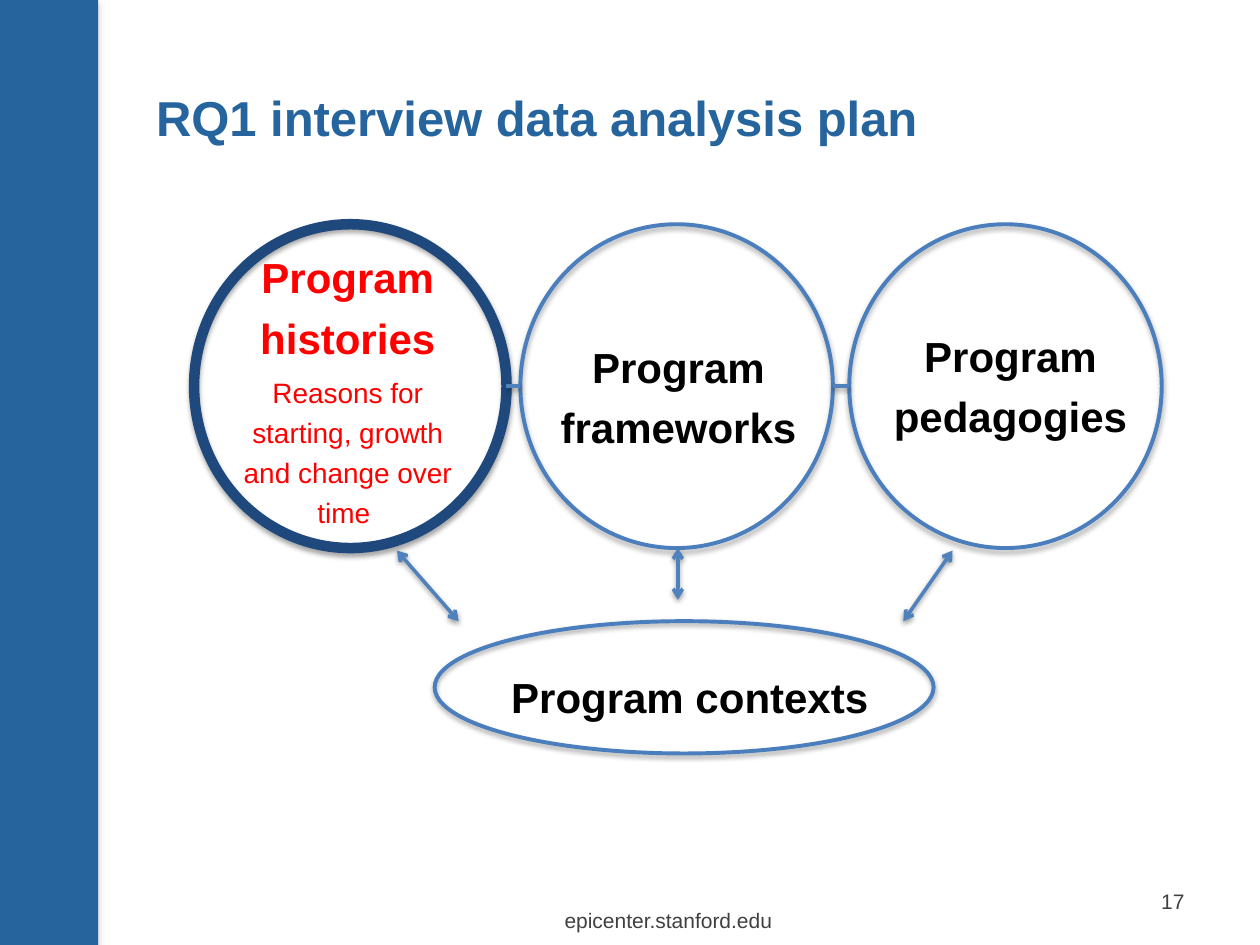
from dataclasses import dataclass

from lxml import etree
from pptx import Presentation
from pptx.dml.color import RGBColor
from pptx.enum.shapes import MSO_CONNECTOR, MSO_SHAPE
from pptx.enum.text import MSO_ANCHOR, PP_ALIGN
from pptx.oxml.ns import qn
from pptx.util import Inches, Pt

RECT, OVAL = MSO_SHAPE.RECTANGLE, MSO_SHAPE.OVAL
STRAIGHT = MSO_CONNECTOR.STRAIGHT
TOP, MIDDLE = MSO_ANCHOR.TOP, MSO_ANCHOR.MIDDLE
LEFT, CENTER, RIGHT = PP_ALIGN.LEFT, PP_ALIGN.CENTER, PP_ALIGN.RIGHT


@dataclass(frozen=True)
class Theme:
    font: str = "Arial"
    brand: str = "26649D"
    outline: str = "4B7EBC"
    focus: str = "1F497D"
    arrow: str = "4F81BD"
    red: str = "FF0000"
    black: str = "000000"
    gray: str = "404040"
    bar_shadow: str = "808080"
    title: int = 28
    label: int = 24
    detail: int = 16
    footer: int = 12


T = Theme()


def rgb(value):
    return RGBColor.from_string(value)


def add_shadow(sp, color, alpha=35, dist=1.8):
    """Give a shape or connector a soft shadow straight below it."""
    sp_pr = sp._element.spPr
    for old in sp_pr.findall(qn("a:effectLst")):
        sp_pr.remove(old)
    effects = etree.SubElement(sp_pr, qn("a:effectLst"))
    shadow = etree.SubElement(
        effects, qn("a:outerShdw"), blurRad=str(Pt(3.1)), dist=str(Pt(dist)),
        dir="5400000", rotWithShape="0")
    clr = etree.SubElement(shadow, qn("a:srgbClr"), val=color)
    etree.SubElement(clr, qn("a:alpha"), val=str(alpha * 1000))


def add_bar(s):
    sp = s.shapes.add_shape(RECT, 0, 0, Inches(0.78), Inches(7.5))
    sp.fill.solid()
    sp.fill.fore_color.rgb = rgb(T.brand)
    sp.line.fill.background()
    add_shadow(sp, T.bar_shadow)


def add_oval(s, box, color=T.outline, width=2.25):
    sp = s.shapes.add_shape(OVAL, *map(Inches, box))
    sp.fill.background()
    sp.line.color.rgb = rgb(color)
    sp.line.width = Pt(width)
    add_shadow(sp, T.black)


def add_text(s, box, lines, color, align=CENTER, anchor=MIDDLE, **spacing):
    """Write (text, size, bold) lines, one paragraph each."""
    tf = s.shapes.add_textbox(*map(Inches, box)).text_frame
    tf.word_wrap = True
    tf.vertical_anchor = anchor
    for i, (text, size, bold) in enumerate(lines):
        p = tf.add_paragraph() if i else tf.paragraphs[0]
        p.alignment = align
        for name, value in spacing.items():
            setattr(p, name, value)
        if i:
            p.space_before = Pt(size * 0.2)
        r = p.add_run()
        r.text = text
        fmt = {"name": T.font, "size": Pt(size), "bold": bold}
        for name, value in fmt.items():
            setattr(r.font, name, value)
        r.font.color.rgb = rgb(color)
    return tf


def add_label(s, box, lines, color=T.black):
    tf = add_text(s, box, lines, color, anchor=TOP, line_spacing=1.2)
    for p in tf.paragraphs:
        p_pr = p._p.get_or_add_pPr()
        p_pr.set("marL", str(Inches(0.09)))
        p_pr.set("indent", "0")


def add_link(s, start, end, arrows=False):
    cx = s.shapes.add_connector(STRAIGHT, *map(Inches, start + end))
    cx.line.color.rgb = rgb(T.arrow)
    cx.line.width = Pt(2)
    if arrows:
        ln = cx.line._get_or_add_ln()
        for tag in ("a:headEnd", "a:tailEnd"):
            etree.SubElement(ln, qn(tag), type="arrow")
    add_shadow(cx, T.black, alpha=38, dist=1.6)


def main():
    prs = Presentation()
    prs.slide_width, prs.slide_height = Inches(10), Inches(7.5)
    s = prs.slides.add_slide(prs.slide_layouts[6])

    # Frame: side bar, footer, page number and title
    add_bar(s)
    add_text(s, (3.72, 7.1, 3.17, 0.4),
             [("epicenter.stanford.edu", T.footer, False)], T.gray)
    add_text(s, (7.17, 6.95, 2.33, 0.4), [("17", T.footer, False)], T.gray, RIGHT)
    add_text(s, (1.14, 0.3, 8.36, 1.25),
             [("RQ1 interview data analysis plan", T.title, True)], T.brand, LEFT)

    # Three program circles, the first one in focus, above the contexts oval
    lefts, top, width, height = (1.54, 4.13, 6.74), 1.78, 2.48, 2.57
    for i, left in enumerate(lefts):
        style = {} if i else {"color": T.focus, "width": 6}
        add_oval(s, (left, top, width, height), **style)
    add_oval(s, (3.45, 4.93, 3.96, 1.05))

    # Labels
    add_label(s, (1.66, 1.87, 2.11, 0.98), [
        ("Program histories", T.label, True),
        ("Reasons for starting, growth and change over time ", T.detail, False),
    ], T.red)
    for text, box in (
        ("Program frameworks", (3.72, 2.58, 3.24, 0.97)),
        ("Program pedagogies", (6.42, 2.49, 3.11, 0.98)),
        ("Program contexts", (3.05, 5.2, 4.76, 0.9)),
    ):
        add_label(s, box, [(text, T.label, True)])

    # Arrows between the circles and the contexts
    for start, end in (
        ((3.15, 4.37), (3.64, 4.93)),
        ((5.38, 4.35), (5.38, 4.76)),
        ((7.17, 4.93), (7.56, 4.37)),
    ):
        add_link(s, start, end, arrows=True)

    # Short links between neighbouring circles
    middle = top + height / 2
    for left, right in zip(lefts, lefts[1:]):
        add_link(s, (left + width, middle), (right, middle))

    prs.save("out.pptx")


if __name__ == "__main__":
    main()
